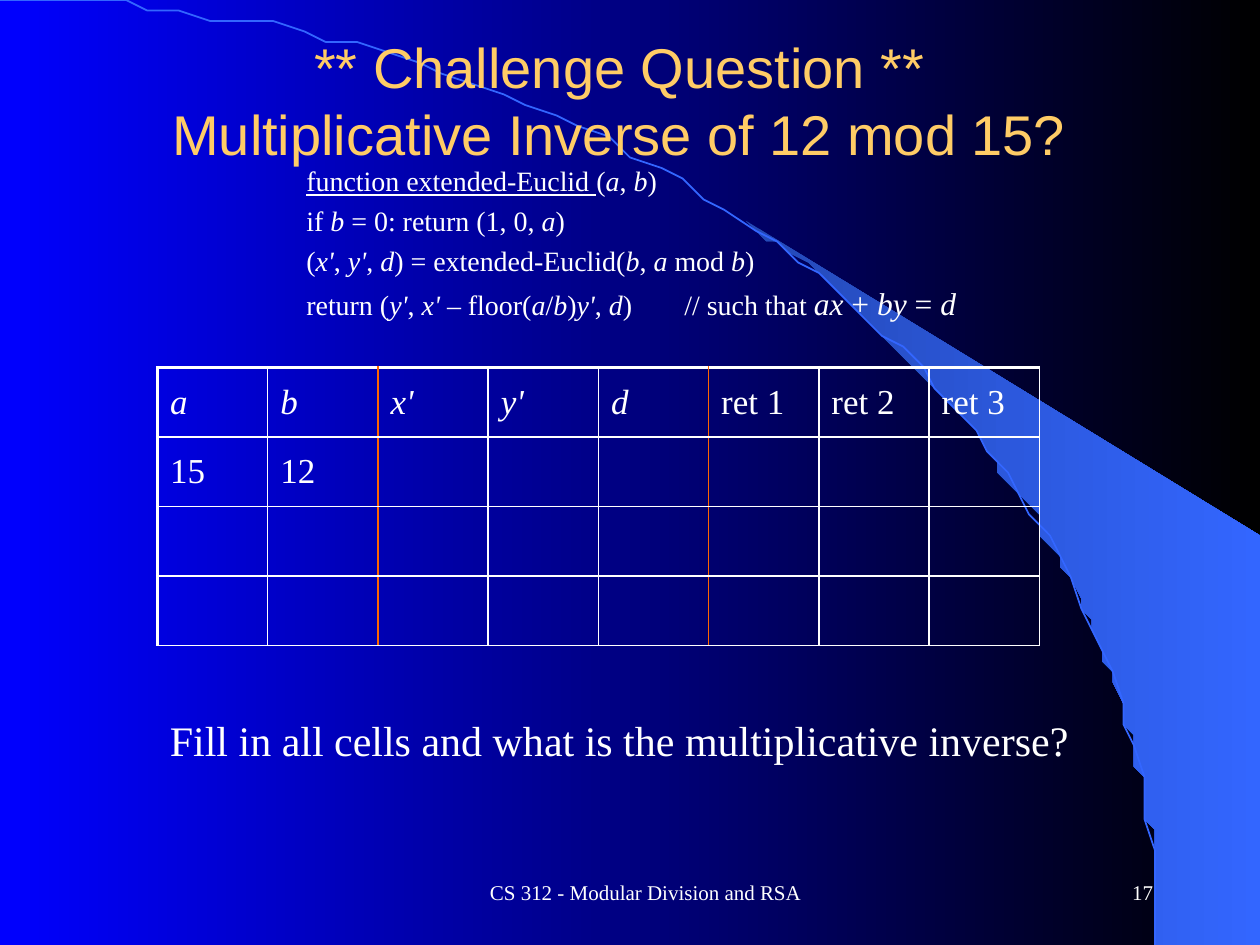
import dataclasses
import itertools
import math

import lxml.etree
import pptx
import pptx.dml.color
import pptx.enum.text
import pptx.oxml.ns
import pptx.util

ALIGN = pptx.enum.text.PP_ALIGN
ANCHOR = pptx.enum.text.MSO_ANCHOR
AUTO_SIZE = pptx.enum.text.MSO_AUTO_SIZE
qn = pptx.oxml.ns.qn

# The slide is a grid of 120 columns by 90 rows
COLUMNS, ROWS = 120, 90
UNIT = pptx.util.Inches(10) / COLUMNS

# Marks that switch a style on and off inside a line of text
MARKS = {"~": "italic", "_": "underline", "^": "large"}


@dataclasses.dataclass(frozen=True)
class Theme:
    heading_font: str = "Arial"
    text_font: str = "Times New Roman"
    text: str = "FFFFFF"
    heading: str = "FFCC66"
    divider: str = "FF6600"
    arc: str = "3366FF"
    wedge: tuple = ("2449B6", "3366FF")
    backdrop: tuple = ("0000FF", "000000")
    title_size: int = 32
    question_size: int = 24
    table_size: int = 20
    formula_size: int = 18
    code_size: int = 16
    footer_size: int = 12
    thin: float = 1
    thick: float = 2.25


THEME = Theme()


def rgb(colour):
    return pptx.dml.color.RGBColor.from_string(colour)


def grid(*counts):
    return [round(count * UNIT) for count in counts]


def write(frame, lines, size, font=THEME.text_font, colour=THEME.text,
          align=ALIGN.LEFT, anchor=ANCHOR.TOP, before=0, indent=0):
    """Write one paragraph per line; MARKS switch styles, \\v breaks a line."""
    frame.vertical_anchor = anchor
    for number, line in enumerate(lines):
        paragraph = frame.add_paragraph() if number else frame.paragraphs[0]
        paragraph.alignment = align
        paragraph.space_before = pptx.util.Pt(before)
        if indent:
            paragraph.level = 1
            properties = paragraph._p.get_or_add_pPr()
            properties.set("marL", str(pptx.util.Inches(indent)))
            properties.set("indent", "0")
        active = set()
        for mark, group in itertools.groupby(
                line, key=lambda letter: letter if letter in MARKS or letter == "\v" else ""):
            if mark == "\v":
                paragraph.add_line_break()
                lxml.etree.SubElement(paragraph._p[-1], qn("a:rPr"), sz=str(size * 100))
            elif mark:
                active ^= {MARKS[mark]}
            else:
                run = paragraph.add_run()
                run.text = "".join(group)
                run.font.name = font
                run.font.size = pptx.util.Pt(THEME.formula_size if "large" in active else size)
                run.font.color.rgb = rgb(colour)
                run.font.italic = "italic" in active
                run.font.underline = "underline" in active


def add_text(slide, area, lines, size, wrap=True, grow=False, **style):
    frame = slide.shapes.add_textbox(*grid(*area)).text_frame
    frame.word_wrap = wrap
    frame.auto_size = AUTO_SIZE.SHAPE_TO_FIT_TEXT if grow else AUTO_SIZE.NONE
    write(frame, lines, size, **style)


def fill_gradient(fill, colours):
    fill.gradient()
    fill.gradient_angle = 0
    for stop, colour in zip(fill.gradient_stops, colours):
        stop.color.rgb = rgb(colour)


def arc_points(start, end, steps=60):
    """Points on the quarter ellipse, by angle in degrees from its top."""
    radius_x, radius_y = 110.4, 89.9
    angles = [math.radians(start + (end - start) * step / steps) for step in range(steps + 1)]
    return [(radius_x * math.sin(angle), radius_y * (1 - math.cos(angle))) for angle in angles]


def add_outline(slide, points, close):
    builder = slide.shapes.build_freeform(*points[0], scale=UNIT)
    builder.add_line_segments(points[1:], close=close)
    outline = builder.convert_to_shape()
    outline.shadow.inherit = False
    return outline


def add_backdrop(slide):
    fill_gradient(slide.background.fill, THEME.backdrop)
    right = COLUMNS - 0.1
    wedge = add_outline(slide, arc_points(39.8, 90) + [(right, 89.9), (right, 50.8)], True)
    fill_gradient(wedge.fill, THEME.wedge)
    wedge.line.fill.background()
    arc = add_outline(slide, arc_points(0, 90), False)
    arc.fill.background()
    arc.line.color.rgb = rgb(THEME.arc)
    arc.line.width = pptx.util.Pt(THEME.thin)


def add_title(slide, area, text):
    title = slide.shapes.title
    title.left, title.top, title.width, title.height = grid(*area)
    title.text_frame.auto_size = AUTO_SIZE.NONE
    write(title.text_frame, [text], THEME.title_size, font=THEME.heading_font,
          colour=THEME.heading, align=ALIGN.CENTER, anchor=ANCHOR.MIDDLE)
    # Bring the title in front of the backdrop
    slide.shapes._spTree.append(title._element)


def set_border(cell, side, colour, width):
    line = lxml.etree.SubElement(cell._tc.get_or_add_tcPr(), qn(f"a:ln{side}"),
                                 w=str(pptx.util.Pt(width)))
    fill = lxml.etree.SubElement(line, qn("a:solidFill"))
    lxml.etree.SubElement(fill, qn("a:srgbClr"), val=colour)


def add_trace_table(slide, area, rows, row_count, divider_columns):
    """Table with thick top and left edges and coloured column dividers."""
    column_count = len(rows[0])
    table = slide.shapes.add_table(row_count, column_count, *grid(*area)).table
    table.first_row = table.horz_banding = False
    for row, column in itertools.product(range(row_count), range(column_count)):
        cell = table.cell(row, column)
        left = THEME.divider if column in divider_columns else THEME.text
        right = THEME.divider if column + 1 in divider_columns else THEME.text
        set_border(cell, "L", left, THEME.thin if column else THEME.thick)
        set_border(cell, "R", right, THEME.thin)
        set_border(cell, "T", THEME.text, THEME.thin if row else THEME.thick)
        set_border(cell, "B", THEME.text, THEME.thin)
        cell.fill.background()
        cell.vertical_anchor = ANCHOR.MIDDLE
        if row < len(rows) and column < len(rows[row]):
            write(cell.text_frame, [rows[row][column]], THEME.table_size,
                  anchor=ANCHOR.MIDDLE, before=4)


def main():
    deck = pptx.Presentation()
    deck.slide_width, deck.slide_height = grid(COLUMNS, ROWS)
    slide = deck.slides.add_slide(deck.slide_layouts[5])
    add_backdrop(slide)

    # Footer
    footer = {"size": THEME.footer_size, "anchor": ANCHOR.MIDDLE}
    add_text(slide, (38, 82, 47, 6), ["CS 312 - Modular Division and RSA"],
             align=ALIGN.CENTER, **footer)
    add_text(slide, (86, 82, 25, 6), ["17"], align=ALIGN.RIGHT, **footer)

    add_title(slide, (8, 4, 102, 11),
              "** Challenge Question **\vMultiplicative Inverse of 12 mod 15?")

    # Trace of the recursive calls
    calls = [["~a~", "~b~", "~x'~", "~y'~", "~d~", "ret 1", "ret 2", "ret 3"], ["15", "12"]]
    add_trace_table(slide, (15, 35, 84, 26.5), calls, row_count=4, divider_columns=(2, 5))

    # Algorithm
    algorithm = [
        "_function extended-Euclid _(~a~, ~b~)",
        "if ~b~ = 0: return (1, 0, ~a~)",
        "(~x'~, ~y'~, ~d~) = extended-Euclid(~b~, ~a ~mod ~b~)",
        "return (~y'~, ~x' ~– floor(~a~/~b~)~y'~, ~d~) \t// such that ^~ax ~+ ~by ~= ~d~^",
    ]
    add_text(slide, (22, 15, 83, 16.5), algorithm, THEME.code_size, grow=True,
             before=3.7, indent=0.5)

    # Question
    add_text(slide, (14.67, 67.5, 88.67, 6),
             ["Fill in all cells and what is the multiplicative inverse?"],
             THEME.question_size, wrap=False, grow=True, align=ALIGN.CENTER)
    deck.save("out.pptx")


if __name__ == "__main__":
    main()
